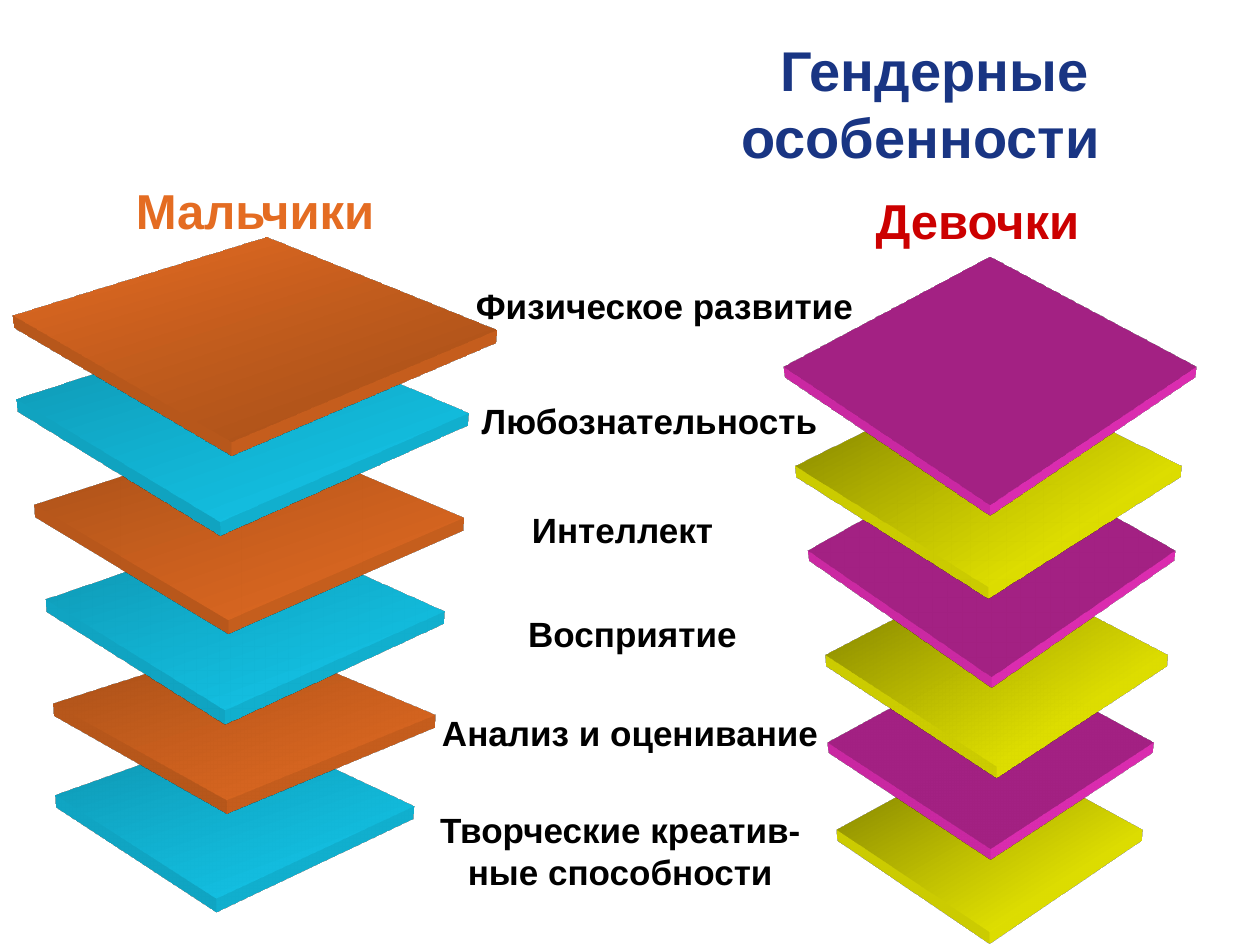
from lxml.etree import SubElement
from pptx import Presentation
from pptx.dml.color import RGBColor
from pptx.enum.shapes import MSO_SHAPE
from pptx.enum.text import MSO_ANCHOR, MSO_AUTO_SIZE, PP_ALIGN
from pptx.oxml.ns import qn
from pptx.util import Cm, Pt

COLORS = {
    "title": "193583", "boys": "E46C22", "girls": "CC0000", "label": "000000",
    "orange": "E46C22", "orange_dark": "A34D18",
    "teal": "14CAEE", "teal_dark": "0E90AA",
    "yellow": "FFFF00", "yellow_dark": "767600",
    "magenta": "FF33CC",
}
TILT = {"orange": 295, "teal": 295, "yellow": 305, "magenta": 310}

BOYS = [
    (0.23, 1.73, 9.68, 9.5),
    (0.3, 3.53, 9.07, 9.25),
    (0.66, 5.92, 8.61, 8.76),
    (0.89, 7.92, 8, 8.53),
    (1.04, 10.52, 7.67, 7.54),
    (1.09, 12.12, 7.21, 8),
]
GIRLS = [
    (15.82, 3.53, 8.28, 7.7),
    (16.05, 5.64, 7.75, 7.49),
    (16.31, 7.52, 7.37, 7.11),
    (16.66, 9.73, 6.86, 6.93),
    (16.69, 11.91, 6.55, 6.1),
    (16.89, 13.49, 6.12, 6.45),
]
LABELS = [
    ("Физическое развитие", 9.09, 5.62, 8.61, 1.1),
    ("Любознательность", 9.3, 7.92, 7.59, 1.1),
    ("Интеллект", 10.1, 10.13, 4.9, 1.1),
    ("Восприятие", 10.3, 12.22, 4.9, 1.1),
    ("Анализ и оценивание", 8.5, 14.22, 8.41, 1.1),
    ("Творческие креатив-ные способности", 8.3, 16.18, 8.41, 1.95),
]


def rgb(name):
    return RGBColor.from_string(COLORS[name])


def add_run(p, text, size=20, color="label", bold=True, italic=False):
    r = p.add_run()
    r.text = text
    r.font.name = "Arial"
    r.font.size = Pt(size)
    r.font.bold = bold
    r.font.italic = italic
    r.font.color.rgb = rgb(color)


def add_node(parent, tag, **attributes):
    return SubElement(parent, qn("a:" + tag), attributes)


def extrude(sp, color):
    scene = add_node(sp._element.spPr, "scene3d")
    camera = add_node(scene, "camera", prst="legacyPerspectiveFront")
    add_node(camera, "rot", lat=str(TILT[color] * 60000), lon="0", rev="0")
    add_node(scene, "lightRig", rig="legacyFlat3", dir="b")
    solid = add_node(sp._element.spPr, "sp3d", extrusionH="100000", prstMaterial="legacyMatte")
    for bevel in ("bevelT", "bevelB"):
        add_node(solid, bevel, w="13500", h="13500", prst="angle")
    add_node(add_node(solid, "extrusionClr"), "srgbClr", val=COLORS[color])


class Deck:
    def __init__(self, s):
        self.s = s

    def plate(self, x, y, w, h, color, rotation=0, flip=False):
        sp = self.s.shapes.add_shape(MSO_SHAPE.DIAMOND, Cm(x), Cm(y), Cm(w), Cm(h))
        sp.rotation = rotation
        sp.shadow.inherit = False
        sp.line.fill.background()
        dark = color + "_dark"
        if dark in COLORS:
            sp.fill.gradient()
            sp.fill.gradient_angle = 315
            ends = (color, dark) if flip else (dark, color)
            for stop, name, position in zip(sp.fill.gradient_stops, ends, (0, 1)):
                stop.color.rgb = rgb(name)
                stop.position = position
        else:
            sp.fill.solid()
            sp.fill.fore_color.rgb = rgb(color)
        extrude(sp, color)

    def stack(self, plates, colors, rotation=0, flip_top=False):
        for i in reversed(range(len(plates))):
            self.plate(*plates[i], colors[i % 2], rotation, flip_top and i == 0)

    def box(self, x, y, w, h, align=PP_ALIGN.CENTER, wrap=True):
        tf = self.s.shapes.add_textbox(Cm(x), Cm(y), Cm(w), Cm(h)).text_frame
        tf.word_wrap = wrap
        p = tf.paragraphs[0]
        p.alignment = align
        return tf, p

    def label(self, text, x, y, w, h, align=PP_ALIGN.CENTER, wrap=True, **fmt):
        tf, p = self.box(x, y, w, h, align, wrap)
        tf.auto_size = MSO_AUTO_SIZE.SHAPE_TO_FIT_TEXT
        add_run(p, text, **fmt)

    def title(self, first, second):
        tf, p = self.box(2.74, 1.4, 19.69, 1.35, PP_ALIGN.RIGHT)
        tf.vertical_anchor = MSO_ANCHOR.MIDDLE
        add_run(p, first, size=32, color="title")
        add_run(p, " ", size=24, color="title", bold=False, italic=True)
        p.add_line_break()
        add_run(p, second, size=32, color="title")


def main():
    prs = Presentation()
    prs.slide_width, prs.slide_height = Cm(25.4), Cm(19.05)
    deck = Deck(prs.slides.add_slide(prs.slide_layouts[6]))
    deck.title("Гендерные", "особенности")
    deck.stack(BOYS, ("orange", "teal"), rotation=4.15, flip_top=True)
    deck.stack(GIRLS, ("magenta", "yellow"))
    heading = dict(align=PP_ALIGN.LEFT, wrap=False, size=28)
    deck.label("Мальчики", 2.49, 3.52, 5.41, 1.45, color="boys", **heading)
    deck.label("Девочки", 17.4, 3.72, 4.65, 1.45, color="girls", **heading)
    for row in LABELS:
        deck.label(*row)
    prs.save("out.pptx")


if __name__ == "__main__":
    main()
